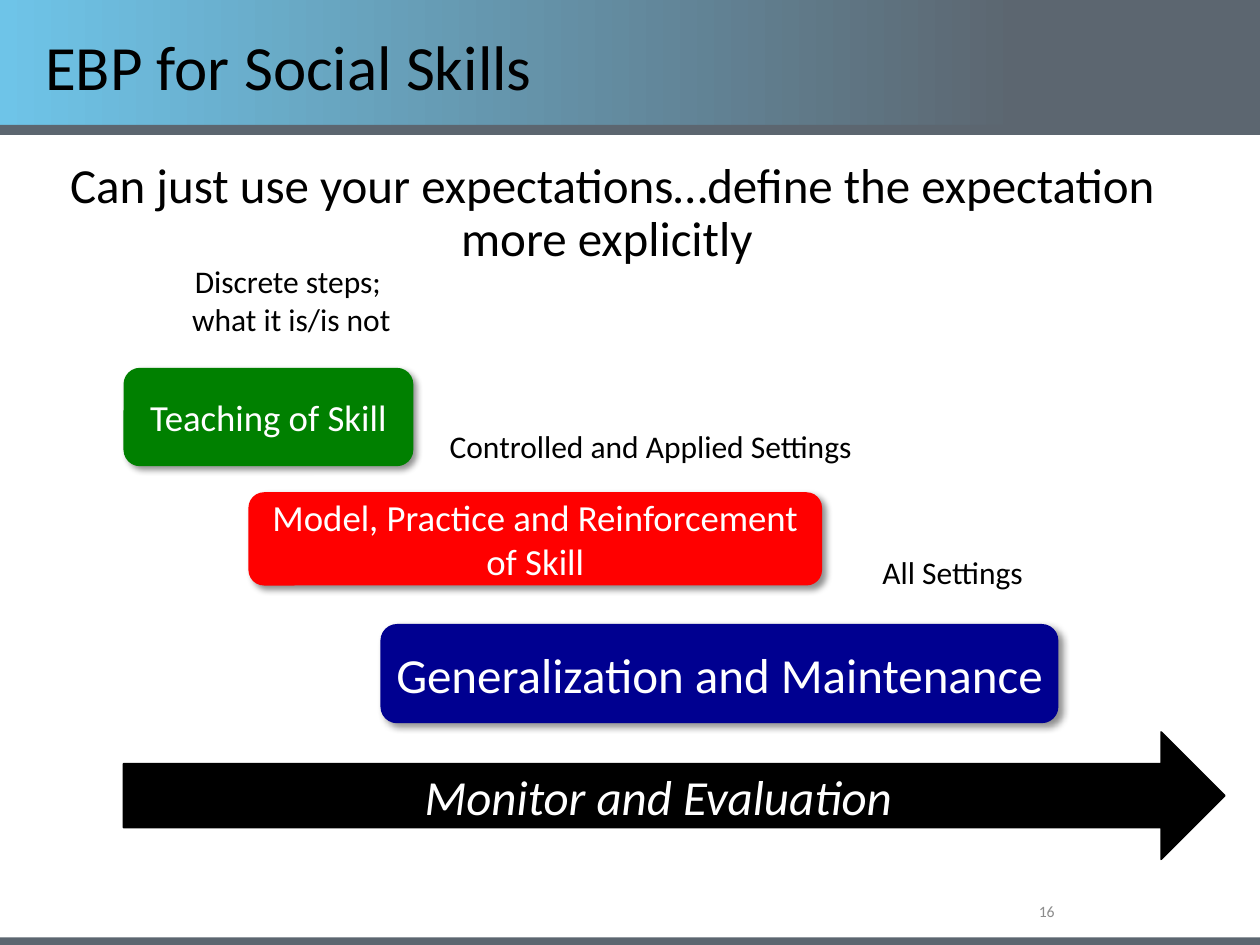
from lxml import etree
from pptx import Presentation, util as u
from pptx.dml.color import RGBColor
from pptx.enum import shapes, text
from pptx.oxml.ns import qn

COLORS = {
    "sky": "6EC4E8", "slate": "5C6670", "gray": "8C8C8C",
    "black": "000000", "white": "FFFFFF",
    "green": "008000", "red": "FF0000", "navy": "000090",
}
FONT = "Calibri"
WIDTH, HEIGHT = 720, 540
NORMAL_INSETS = (7.2, 3.6)
TIGHT_INSETS = (5.04, 2.88)
CENTER, LEFT, RIGHT = text.PP_ALIGN.CENTER, text.PP_ALIGN.LEFT, text.PP_ALIGN.RIGHT
TOP, MIDDLE = text.MSO_ANCHOR.TOP, text.MSO_ANCHOR.MIDDLE


def rgb(name):
    return RGBColor.from_string(COLORS[name])


class SlideBuilder:
    def __init__(self, slide):
        self.slide = slide

    def set_text(self, shape, lines, size, color="black", align=CENTER, anchor=MIDDLE,
                 insets=NORMAL_INSETS, spacing=None, italic=None):
        frame = shape.text_frame
        frame.word_wrap = True
        frame.vertical_anchor = anchor
        frame.margin_left = frame.margin_right = u.Pt(insets[0])
        frame.margin_top = frame.margin_bottom = u.Pt(insets[1])
        frame.text = "\n".join(lines)
        for paragraph in frame.paragraphs:
            paragraph.alignment = align
            paragraph.line_spacing = spacing
            paragraph.font.name = FONT
            paragraph.font.size = u.Pt(size)
            paragraph.font.italic = italic
            paragraph.font.color.rgb = rgb(color)

    def label(self, box, lines, size, **style):
        shape = self.slide.shapes.add_textbox(*map(u.Pt, box))
        self.set_text(shape, lines, size, **style)

    def block(self, kind, box, color):
        shape = self.slide.shapes.add_shape(kind, *map(u.Pt, box))
        shape.shadow.inherit = False
        shape.fill.solid()
        shape.fill.fore_color.rgb = rgb(color)
        shape.line.fill.background()
        return shape

    def bar(self, top, height, color):
        return self.block(shapes.MSO_SHAPE.RECTANGLE, (0, top, WIDTH, height), color)

    def gradient_bar(self, top, height, stops):
        fill = self.bar(top, height, stops[0][1]).fill
        fill.gradient()
        fill.gradient_angle = 0
        for stop, (position, color) in zip(fill.gradient_stops, stops):
            stop.position = position
            stop.color.rgb = rgb(color)

    def step(self, box, caption, size, color):
        shape = self.block(shapes.MSO_SHAPE.ROUNDED_RECTANGLE, box, color)
        self.add_shadow(shape)
        self.set_text(shape, [caption], size, color="white", insets=TIGHT_INSETS)

    def add_shadow(self, shape):
        effects = shape._element.spPr.find(qn("a:effectLst"))
        shadow = etree.SubElement(
            effects, qn("a:outerShdw"), blurRad=str(u.Pt(4)), dist=str(u.Pt(3)),
            dir="2700000", algn="tl", rotWithShape="0")
        color = etree.SubElement(shadow, qn("a:srgbClr"), val=COLORS["black"])
        etree.SubElement(color, qn("a:alpha"), val="43000")

    def arrow(self, box, caption, size):
        shape = self.block(shapes.MSO_SHAPE.RIGHT_ARROW, box, "black")
        shape.line.color.rgb = rgb("black")
        shape.line.width = u.Pt(1)
        self.set_text(shape, [caption], size, color="white", italic=True)


def main():
    deck = Presentation()
    deck.slide_width, deck.slide_height = u.Pt(WIDTH), u.Pt(HEIGHT)
    page = SlideBuilder(deck.slides.add_slide(deck.slide_layouts[6]))

    # Footer and header bands
    page.bar(535.7, 5.4, "slate")
    page.label((508.3, 512.6, 99.4, 16.6), ["16"], 9, color="gray",
               align=RIGHT, insets=TIGHT_INSETS)
    page.gradient_bar(0, 71.3, [(0, "sky"), (0.81, "slate")])
    page.bar(71.3, 5.8, "slate")

    # Title and opening statement
    page.label((18.7, 6.5, 620.6, 67), ["EBP for Social Skills"], 36,
               align=LEFT, spacing=0.9)
    page.label((0, 88.6, 699.8, 414),
               ["Can just use your expectations…define the expectation more explicitly "],
               28, anchor=TOP, spacing=0.9)

    # Staircase of teaching steps
    for box, caption, size, color in [
        ((70.6, 210.2, 165.6, 56.2), "Teaching of Skill", 21, "green"),
        ((142, 281.3, 327.8, 53.3), "Model, Practice and Reinforcement of Skill", 21, "red"),
        ((217.4, 356.6, 387.4, 56.7), "Generalization and Maintenance", 28, "navy"),
    ]:
        page.step(box, caption, size, color)

    # Note above each step
    for box, lines in [
        ((76.3, 146.2, 176.4, 51), ["Discrete steps;", " what it is/is not"]),
        ((228.2, 240.5, 287.3, 29), ["Controlled and Applied Settings"]),
        ((470.2, 312.5, 148.3, 29), ["All Settings"]),
    ]:
        page.label(box, lines, 18, anchor=TOP)

    # Ongoing process under all steps
    page.arrow((70.6, 418.3, 629.3, 72.7), "Monitor and Evaluation", 28)

    deck.save("out.pptx")


if __name__ == "__main__":
    main()
